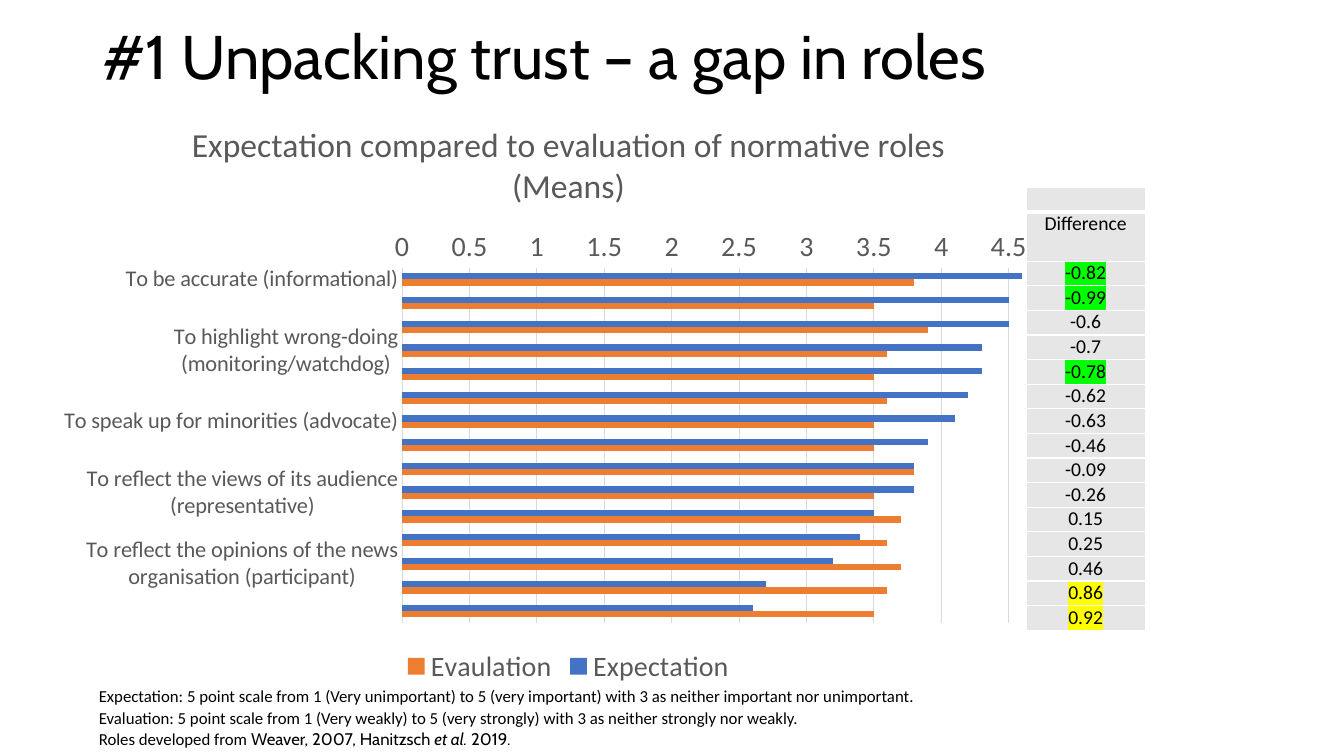
from dataclasses import dataclass

from lxml import etree
from pptx import Presentation
from pptx import util as u
from pptx.chart.data import CategoryChartData
from pptx.dml.color import RGBColor
from pptx.enum import chart as charts, text
from pptx.oxml.ns import qn

COLORS = {
    "black": "000000", "gray": "595959", "grid": "D9D9D9", "cell": "E7E6E6",
    "white": "FFFFFF", "blue": "4472C4", "orange": "ED7D31",
    "green": "00FF00", "yellow": "FFFF00",
}


@dataclass
class Role:
    name: str
    expectation: float
    evaluation: float
    difference: str
    highlight: str = ""


@dataclass
class Span:
    words: str
    font: str = "Calibri"
    italic: bool = False


ROLES = [
    Role("To be accurate (informational)", 4.6, 3.8, "-0.82", "green"),
    Role("To be balanced and unbiased (informational)", 4.5, 3.5, "-0.99", "green"),
    Role("To inform (informational)", 4.5, 3.9, "-0.6"),
    Role("To highlight wrong-doing (monitoring/watchdog)", 4.3, 3.6, "-0.7"),
    Role("To hold powerful people and institutions to account (monitoring/watchdog)",
         4.3, 3.5, "-0.78", "green"),
    Role("To educate (informational)", 4.2, 3.6, "-0.62"),
    Role("To speak up for minorities (advocate)", 4.1, 3.5, "-0.63"),
    Role("To advocate on behalf of the majority of the public (advocate)", 3.9, 3.5, "-0.46"),
    Role("To help people form opinions (representative)", 3.8, 3.8, "-0.09"),
    Role("To reflect the views of its audience (representative)", 3.8, 3.5, "-0.26"),
    Role("To reflect the values of the news organisation (participant)", 3.5, 3.7, "0.15"),
    Role("To be entertaining and engaging (commercial)", 3.4, 3.6, "0.25"),
    Role("To reflect the opinions of the news organisation (participant)", 3.2, 3.7, "0.46"),
    Role("To provide information on the private lives of celebrities and "
         "high -profile people (commercial)", 2.7, 3.6, "0.86", "yellow"),
    Role("To support a political party (advocate)", 2.6, 3.5, "0.92", "yellow"),
]

NOTES = [
    [Span("Expectation: 5 point scale from 1 (Very unimportant) to 5 (very important) "
          "with 3 as neither important nor unimportant.")],
    [Span("Evaluation: 5 point scale from 1 (Very weakly) to 5 (very strongly) "
          "with 3 as neither strongly nor weakly.")],
    [Span("Roles developed from "), Span("Weaver, 2007, Hanitzsch ", "Cabin"),
     Span("et al. ", "Cabin", True), Span("2019.", "Cabin")],
]


def rgb(name: str) -> RGBColor:
    return RGBColor.from_string(COLORS[name])


def style(font, size: float, color: str = "black", name: str = "Calibri") -> None:
    font.size = u.Pt(size)
    font.name = name
    font.color.rgb = rgb(color)


def add_color(parent, color: str) -> None:
    etree.SubElement(parent, qn("a:srgbClr"), val=COLORS[color])


def add_text(page, place: tuple, lines: list[list[Span]], size: float, spacing: float):
    box = page.shapes.add_textbox(*map(u.Cm, place))
    frame = box.text_frame
    frame.word_wrap = True
    for index, line in enumerate(lines):
        para = frame.paragraphs[0] if index == 0 else frame.add_paragraph()
        para.line_spacing = spacing
        for span in line:
            run = para.add_run()
            run.text = span.words
            style(run.font, size, name=span.font)
            run.font.italic = span.italic
    return frame


def add_role_chart(page) -> None:
    data = CategoryChartData()
    data.categories = [role.name for role in ROLES]
    data.add_series("Expectation", [role.expectation for role in ROLES])
    data.add_series("Evaulation", [role.evaluation for role in ROLES])
    place = map(u.Cm, (0.81, 2.49, 27.03, 14.88))
    chart = page.shapes.add_chart(charts.XL_CHART_TYPE.BAR_CLUSTERED, *place, data).chart
    style(chart.font, 20)

    # Title and legend
    title = chart.chart_title.text_frame
    title.text = "Expectation compared to evaluation of normative roles (Means)"
    style(title.paragraphs[0].runs[0].font, 24, "gray")
    title.paragraphs[0].runs[0].font.bold = False
    chart.has_legend = True
    chart.legend.position = charts.XL_LEGEND_POSITION.BOTTOM
    chart.legend.include_in_layout = False
    style(chart.legend.font, 20, "gray")

    # Bars
    plot = chart.plots[0]
    plot.gap_width = 182
    plot.overlap = 0
    plot.vary_by_categories = False
    for series, color in zip(plot.series, ("blue", "orange")):
        series.format.fill.solid()
        series.format.fill.fore_color.rgb = rgb(color)

    # Axes
    roles, means = chart.category_axis, chart.value_axis
    for axis, size in ((roles, 16), (means, 20)):
        axis.major_tick_mark = axis.minor_tick_mark = charts.XL_TICK_MARK.NONE
        style(axis.tick_labels.font, size, "gray")
    roles.reverse_order = True
    means.minimum_scale, means.maximum_scale, means.major_unit = 0, 4.6, 0.5
    means.format.line.fill.background()
    for line in (roles.format.line, means.major_gridlines.format.line):
        line.color.rgb = rgb("grid")
        line.width = u.Pt(0.75)

    # Plot area inside the frame
    area = plot._element.getparent()
    for old in area.findall(qn("c:layout")):
        area.remove(old)
    layout = etree.Element(qn("c:layout"))
    area.insert(0, layout)
    manual = etree.SubElement(layout, qn("c:manualLayout"))
    for tag, value in (("layoutTarget", "inner"), ("xMode", "edge"), ("yMode", "edge"),
                       ("x", "0.345"), ("y", "0.286"), ("w", "0.578"), ("h", "0.602")):
        etree.SubElement(manual, qn(f"c:{tag}"), val=value)


def fill_cell(cell, words: str, highlight: str, bottom: float) -> None:
    cell.margin_left = cell.margin_right = u.Cm(0.18)
    cell.margin_top = cell.margin_bottom = 0
    cell.fill.solid()
    cell.fill.fore_color.rgb = rgb("cell")
    para = cell.text_frame.paragraphs[0]
    para.text = words
    para.alignment = text.PP_ALIGN.CENTER
    for run in para.runs:
        style(run.font, 14)
        if highlight:
            mark = etree.Element(qn("a:highlight"))
            add_color(mark, highlight)
            run.font._element.find(qn("a:solidFill")).addnext(mark)
    if not words:
        etree.SubElement(para._p, qn("a:endParaRPr"), sz="1200")
    for index, (side, width) in enumerate((("L", 1), ("R", 1), ("T", 1), ("B", bottom))):
        border = etree.Element(qn(f"a:ln{side}"), w=str(u.Pt(width)))
        add_color(etree.SubElement(border, qn("a:solidFill")), "white")
        cell._tc.get_or_add_tcPr().insert(index, border)


def add_difference_table(page) -> None:
    rows = [("", ""), ("Difference", "")]
    rows += [(role.difference, role.highlight) for role in ROLES]
    place = map(u.Cm, (25.86, 4.72, 3, 11.15))
    table = page.shapes.add_table(len(rows), 1, *place).table
    table.first_row = table.horz_banding = False
    for index, (words, highlight) in enumerate(rows):
        table.rows[index].height = u.Cm(1.24 if index == 1 else 0.62)
        fill_cell(table.cell(index, 0), words, highlight, 3 if index == 0 else 1)


def main() -> None:
    deck = Presentation()
    deck.slide_width, deck.slide_height = u.Cm(33.87), u.Cm(19.05)
    page = deck.slides.add_slide(deck.slide_layouts[6])

    # Heading
    heading = [[Span("#1 Unpacking trust – a gap in roles", "Cabin")]]
    frame = add_text(page, (2.33, -0.33, 29.21, 3.68), heading, 44, 0.9)
    frame.vertical_anchor = text.MSO_ANCHOR.MIDDLE

    # Chart, notes and differences
    add_role_chart(page)
    frame = add_text(page, (2.24, 17.12, 27.46, 1.88), NOTES, 12, 1.07)
    frame.auto_size = text.MSO_AUTO_SIZE.SHAPE_TO_FIT_TEXT
    add_difference_table(page)

    deck.save("out.pptx")


if __name__ == "__main__":
    main()
